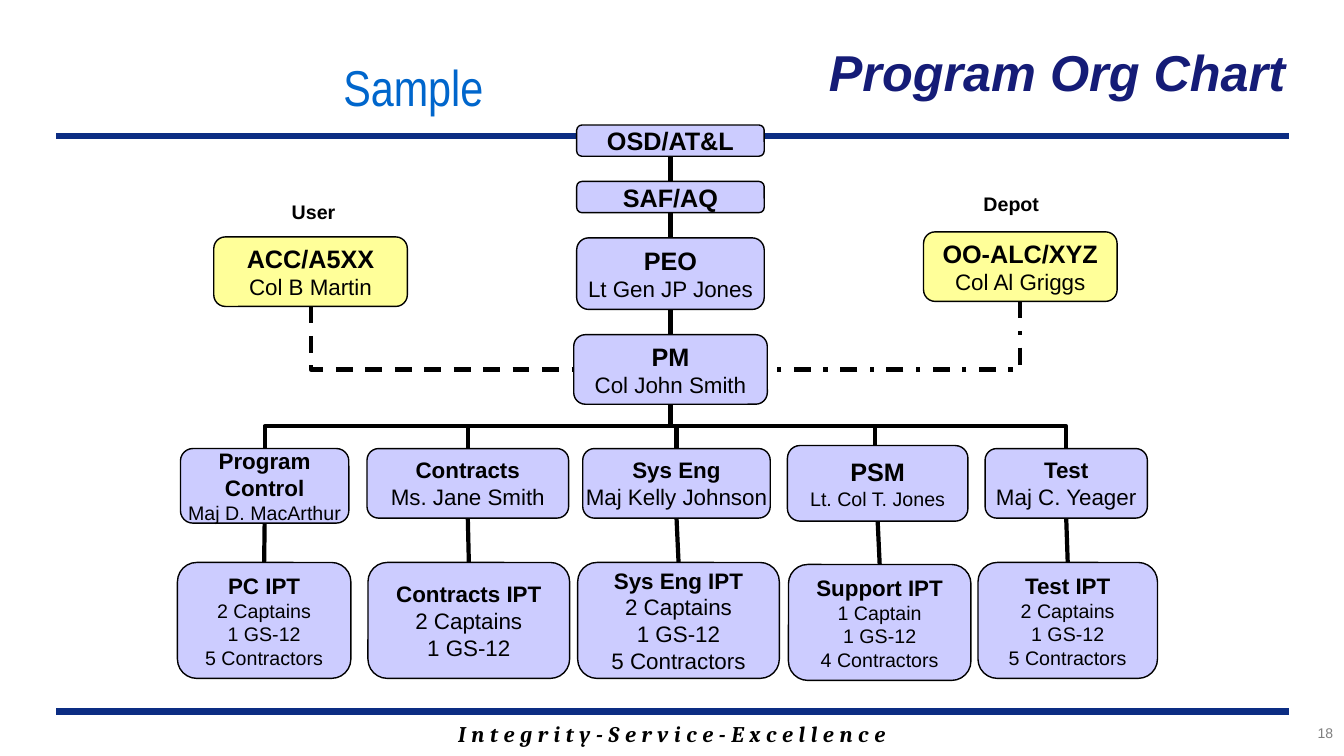
"""Build the program organisation chart slide."""
from dataclasses import dataclass

from lxml import etree
from pptx import Presentation
from pptx import util as u
from pptx.dml.color import RGBColor
from pptx.enum import dml, shapes, text
from pptx.oxml.ns import qn

TOP, LEFT, BOTTOM, RIGHT = range(4)
CENTER, ALIGN_RIGHT = text.PP_ALIGN.CENTER, text.PP_ALIGN.RIGHT


@dataclass(frozen=True)
class Theme:
    """Hold the colours, fonts and sizes of the slide."""
    black: str = "000000"
    navy: str = "151C77"
    rule: str = "0C2D83"
    lilac: str = "CCCCFF"
    yellow: str = "FFFF99"
    sample: str = "0066CC"
    glow: str = "99CCFF"
    gray: str = "7F7F7F"
    font: str = "Arial"
    narrow: str = "Arial Narrow"
    serif: str = "Cambria"
    display: int = 36
    lead: int = 18
    normal: int = 16
    small: int = 14
    tiny: int = 10
    link: float = 3
    bar: float = 4.5


T = Theme()


@dataclass(frozen=True)
class Box:
    """Describe one rounded box: bold heading lines over plain lines."""
    at: tuple[float, float, float, float]
    head: tuple[str, ...]
    body: tuple[str, ...] = ()
    head_size: int = T.normal
    body_size: int = T.normal
    fill: str = T.lilac


CHAIN = (
    Box((5.72, 1.24, 1.86, 0.31), ("OSD/AT&L",), head_size=T.lead),
    Box((5.72, 1.8, 1.86, 0.31), ("SAF/AQ",), head_size=T.lead),
    Box((5.72, 2.36, 1.86, 0.71), ("PEO",), ("Lt Gen JP Jones",), T.lead),
    Box((5.69, 3.32, 1.92, 0.69), ("PM",), ("Col John Smith",), T.lead),
)
USER = Box((2.12, 2.35, 1.92, 0.69), ("ACC/A5XX",), ("Col B Martin",), T.lead, fill=T.yellow)
DEPOT = Box((9.16, 2.3, 1.92, 0.69), ("OO-ALC/XYZ",), ("Col Al Griggs",), T.lead, fill=T.yellow)
PSM = Box((7.81, 4.42, 1.79, 0.75), ("PSM",), ("Lt. Col T. Jones",), T.lead, T.small)
TEAMS = (
    (Box((1.79, 4.45, 1.67, 0.74), ("Program", "Control"), ("Maj D. MacArthur",), body_size=T.small),
     Box((1.76, 5.58, 1.72, 1.15), ("PC IPT",), ("2 Captains", "1 GS-12", "5 Contractors"),
         body_size=T.small)),
    (Box((3.64, 4.45, 2, 0.69), ("Contracts",), ("Ms. Jane Smith",)),
     Box((3.65, 5.58, 2, 1.15), ("Contracts IPT",), ("2 Captains", "1 GS-12"))),
    (Box((5.78, 4.45, 1.86, 0.69), ("Sys Eng",), ("Maj Kelly Johnson",)),
     Box((5.73, 5.58, 2, 1.15), ("Sys Eng IPT",), ("2 Captains", "1 GS-12", "5 Contractors"))),
    (PSM,
     Box((7.82, 5.6, 1.81, 1.15), ("Support IPT",), ("1 Captain", "1 GS-12", "4 Contractors"),
         body_size=T.small)),
    (Box((9.77, 4.45, 1.61, 0.69), ("Test",), ("Maj C. Yeager",)),
     Box((9.7, 5.58, 1.78, 1.15), ("Test IPT",), ("2 Captains", "1 GS-12", "5 Contractors"),
         body_size=T.small)),
)


def write(p, words: str, *, size: int, bold: bool = False, italic: bool = False,
          color: str = T.black, font: str = T.font, align=CENTER):
    """Put one formatted run in a paragraph and return the run."""
    p.alignment = align
    r = p.add_run()
    r.text = words
    f = r.font
    f.size, f.bold, f.italic, f.name = u.Pt(size), bold, italic, font
    f.color.rgb = RGBColor.from_string(color)
    return r


def add_label(s, at: tuple, words: str, *, wrap: bool = False, **fmt):
    """Add a text box with one line and return its run."""
    tf = s.shapes.add_textbox(*map(u.Inches, at)).text_frame
    tf.word_wrap = wrap
    return write(tf.paragraphs[0], words, **fmt)


def add_box(s, box: Box):
    """Draw a rounded box with its lines of text."""
    sp = s.shapes.add_shape(shapes.MSO_SHAPE.ROUNDED_RECTANGLE, *map(u.Inches, box.at))
    sp.shadow.inherit = False
    sp.fill.solid()
    sp.fill.fore_color.rgb = RGBColor.from_string(box.fill)
    sp.line.color.rgb = RGBColor.from_string(T.black)
    sp.line.width = u.Pt(1)
    tf = sp.text_frame
    tf.word_wrap = False
    tf.vertical_anchor = text.MSO_ANCHOR.MIDDLE
    lines = [(h, box.head_size, True) for h in box.head]
    lines += [(b, box.body_size, False) for b in box.body]
    for i, (words, size, bold) in enumerate(lines):
        p = tf.add_paragraph() if i else tf.paragraphs[0]
        write(p, words, size=size, bold=bold)
    return sp


def add_line(s, ends: tuple = (0, 0, 0, 0), *, kind=shapes.MSO_CONNECTOR.STRAIGHT,
             color: str = T.black, width: float = T.link, dash=None):
    """Draw a connector without a shadow."""
    c = s.shapes.add_connector(kind, *map(u.Inches, ends))
    c.line.color.rgb = RGBColor.from_string(color)
    c.line.width = u.Pt(width)
    if dash:
        c.line.dash_style = dash
    etree.SubElement(c._element.spPr, qn("a:effectLst"))
    return c


def join(s, upper, lower) -> None:
    """Link the bottom of one box to the top of another."""
    c = add_line(s)
    c.begin_connect(upper, BOTTOM)
    c.end_connect(lower, TOP)


def add_elbow(s, start, end, side: int = TOP, dash=None) -> None:
    """Link the bottom of a box to a side of another with a bend."""
    c = add_line(s, kind=shapes.MSO_CONNECTOR.ELBOW, dash=dash)
    c.begin_connect(start, BOTTOM)
    c.end_connect(end, side)
    x1, y1 = start.left + start.width // 2, start.top + start.height
    x2 = end.left + (end.width // 2 if side == TOP else end.width if side == RIGHT else 0)
    y2 = end.top + (0 if side == TOP else end.height // 2)
    c.width, c.height = y2 - y1, abs(x2 - x1)
    c.left, c.top = (x1 + x2 - c.width) // 2, (y1 + y2 - c.height) // 2
    xfrm = c._element.spPr.find(qn("a:xfrm"))
    for flip in ("flipH", "flipV"):
        xfrm.attrib.pop(flip, None)
    xfrm.set("rot", str((270 if x2 > x1 else 90) * 60000))
    if x2 > x1:
        xfrm.set("flipH", "1")
    if side != TOP:
        c._element.spPr.find(qn("a:prstGeom")).set("prst", "bentConnector2")


def add_outline(r, color: str, width: float) -> None:
    """Give a run a coloured outline."""
    ln = etree.Element(qn("a:ln"), w=str(u.Pt(width)))
    fill = etree.SubElement(ln, qn("a:solidFill"))
    etree.SubElement(fill, qn("a:srgbClr"), val=color)
    r.font._element.insert(0, ln)


def main() -> None:
    """Build and save the slide."""
    prs = Presentation()
    prs.slide_width, prs.slide_height = u.Inches(13.33), u.Inches(7.5)
    s = prs.slides.add_slide(prs.slide_layouts[5])
    title = s.shapes.title
    title.left, title.top, title.width, title.height = map(u.Inches, (2.43, 0.08, 10.42, 1.25))
    tf = title.text_frame
    tf.auto_size = text.MSO_AUTO_SIZE.NONE
    tf.vertical_anchor = text.MSO_ANCHOR.MIDDLE
    write(tf.paragraphs[0], "Program Org Chart", size=T.display, bold=True, italic=True,
          color=T.navy, align=ALIGN_RIGHT)

    motto = add_label(s, (1.89, 7.1, 9.56, 0.37),
                      "I n t e g r i t y - S e r v i c e - E x c e l l e n c e", wrap=True,
                      size=T.normal, bold=True, italic=True, font=T.serif)
    motto.font._element.set("spc", "27")
    for y in (7.06, 1.35):
        add_line(s, (0.56, y, 12.78, y), color=T.rule, width=T.bar)
    add_line(s, (8.68, 4.25, 8.68, 4.69))

    chain = [add_box(s, box) for box in CHAIN]
    for upper, lower in zip(chain, chain[1:]):
        join(s, upper, lower)
    pm = chain[-1]
    for lead_box, team_box in TEAMS:
        lead, team = add_box(s, lead_box), add_box(s, team_box)
        join(s, lead, team)
        if lead_box is not PSM:
            add_elbow(s, pm, lead)
    add_elbow(s, add_box(s, USER), pm, LEFT, dml.MSO_LINE.DASH)
    add_elbow(s, add_box(s, DEPOT), pm, RIGHT, dml.MSO_LINE.DASH_DOT)

    add_label(s, (2.71, 1.93, 0.8, 0.33), "User", size=T.small, bold=True)
    add_label(s, (9.58, 1.86, 0.9, 0.33), "Depot", size=T.small, bold=True)
    sample = add_label(s, (3, 0.51, 2.2, 0.62), "Sample", size=T.display, color=T.sample,
                       font=T.narrow)
    add_outline(sample, T.glow, 1.5)
    add_label(s, (11.65, 7.14, 1.67, 0.33), "18", wrap=True, size=T.tiny, color=T.gray,
              align=ALIGN_RIGHT)
    prs.save("out.pptx")


if __name__ == "__main__":
    main()
